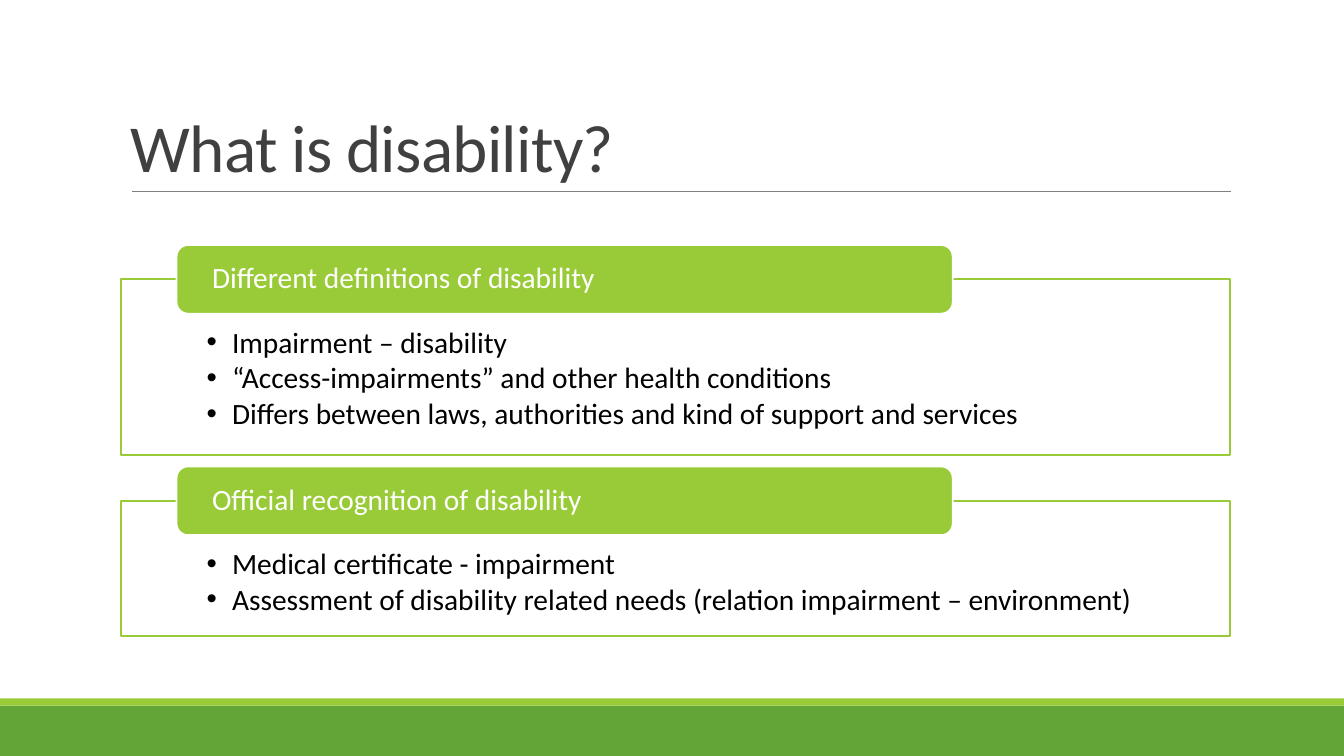
from pptx import Presentation
from pptx.dml.color import RGBColor
from pptx.enum.shapes import MSO_CONNECTOR, MSO_SHAPE
from pptx.enum.text import MSO_ANCHOR, PP_ALIGN
from pptx.oxml.ns import qn
from pptx.util import Cm, Pt
from lxml.etree import SubElement

TITLE = "What is disability?"
SECTIONS = [
    ("Different definitions of disability", [
        "Impairment – disability",
        "“Access-impairments” and other health conditions",
        "Differs between laws, authorities and kind of support and services",
    ]),
    ("Official recognition of disability", [
        "Medical certificate - impairment",
        "Assessment of disability related needs (relation impairment – environment)",
    ]),
]
LIME, GREEN, WHITE, BLACK = "99CB38", "63A537", "FFFFFF", "000000"
DARK, GREY = "404040", "808080"
WIDTH, HEIGHT = 33.87, 19.05
LEFT, FRAME_W = 3.05, 27.94
FIRST_TOP, GAP = 7.04, 1.16
FRAME_BASE, BULLET_H = 1.36, 1.02
HEADER_LEFT, HEADER_W, HEADER_H = 4.45, 19.56, 1.73


def rgb(color):
    return RGBColor.from_string(color)


def add_box(kind, box, fill, line=None):
    sp = s.shapes.add_shape(kind, *map(Cm, box))
    sp.shadow.inherit = False
    sp.fill.solid()
    sp.fill.fore_color.rgb = rgb(fill)
    if line:
        sp.line.color.rgb = rgb(line)
        sp.line.width = Pt(1.25)
    else:
        sp.line.fill.background()
    return sp


def write(sp, lines, size, color, anchor, insets, spacing=0.9, after=0):
    tf = sp.text_frame
    tf.word_wrap = True
    tf.vertical_anchor = anchor
    tf.margin_left, tf.margin_top, tf.margin_right, tf.margin_bottom = map(Cm, insets)
    tf.text = "\n".join(lines)
    for p in tf.paragraphs:
        p.alignment = PP_ALIGN.LEFT
        p.line_spacing = spacing
        p.space_after = Pt(after)
        font = p.runs[0].font
        font.name, font.size = "Calibri", Pt(size)
        font.color.rgb = rgb(color)
    return tf


def add_bullet(p):
    pPr = p._p.get_or_add_pPr()
    pPr.set("marL", str(Cm(0.64)))
    pPr.set("indent", str(-Cm(0.64)))
    SubElement(pPr, qn("a:buFont")).set("typeface", "Arial")
    SubElement(pPr, qn("a:buChar")).set("char", "•")


prs = Presentation()
prs.slide_width, prs.slide_height = Cm(WIDTH), Cm(HEIGHT)
s = prs.slides.add_slide(prs.slide_layouts[6])

add_box(MSO_SHAPE.RECTANGLE, (0, 17.78, WIDTH, 1.27), GREEN)
add_box(MSO_SHAPE.RECTANGLE, (0, 17.6, WIDTH, 0.18), LIME)

rule = s.shapes.add_connector(MSO_CONNECTOR.STRAIGHT, Cm(3.33), Cm(4.83), Cm(31.01), Cm(4.83))
rule.line.color.rgb = rgb(GREY)
rule.line.width = Pt(0.5)
SubElement(rule._element.spPr, qn("a:effectLst"))

title = s.shapes.add_textbox(Cm(LEFT), Cm(0.79), Cm(FRAME_W), Cm(4.04))
tf = write(title, [TITLE], 48, DARK, MSO_ANCHOR.BOTTOM, (0.25, 0.13, 0.25, 0.13), 0.85)
tf.paragraphs[0].runs[0]._r.get_or_add_rPr().set("spc", "-50")

top = FIRST_TOP
for heading, bullets in SECTIONS:
    frame_h = FRAME_BASE + BULLET_H * len(bullets)
    frame = add_box(MSO_SHAPE.RECTANGLE, (LEFT, top, FRAME_W, frame_h), WHITE, LIME)
    alpha = SubElement(frame.fill._xPr.find(qn("a:solidFill"))[0], qn("a:alpha"))
    alpha.set("val", "90000")
    tf = write(frame, bullets, 21, BLACK, MSO_ANCHOR.TOP, (2.16, 1.22, 2.16, 0.41), after=2.7)
    for p in tf.paragraphs:
        add_bullet(p)

    header_box = (HEADER_LEFT, top - HEADER_H / 2, HEADER_W, HEADER_H)
    header = add_box(MSO_SHAPE.ROUNDED_RECTANGLE, header_box, LIME, WHITE)
    write(header, [heading], 21, WHITE, MSO_ANCHOR.MIDDLE, (0.81, 0, 0.81, 0))
    top += frame_h + GAP

prs.save("out.pptx")
